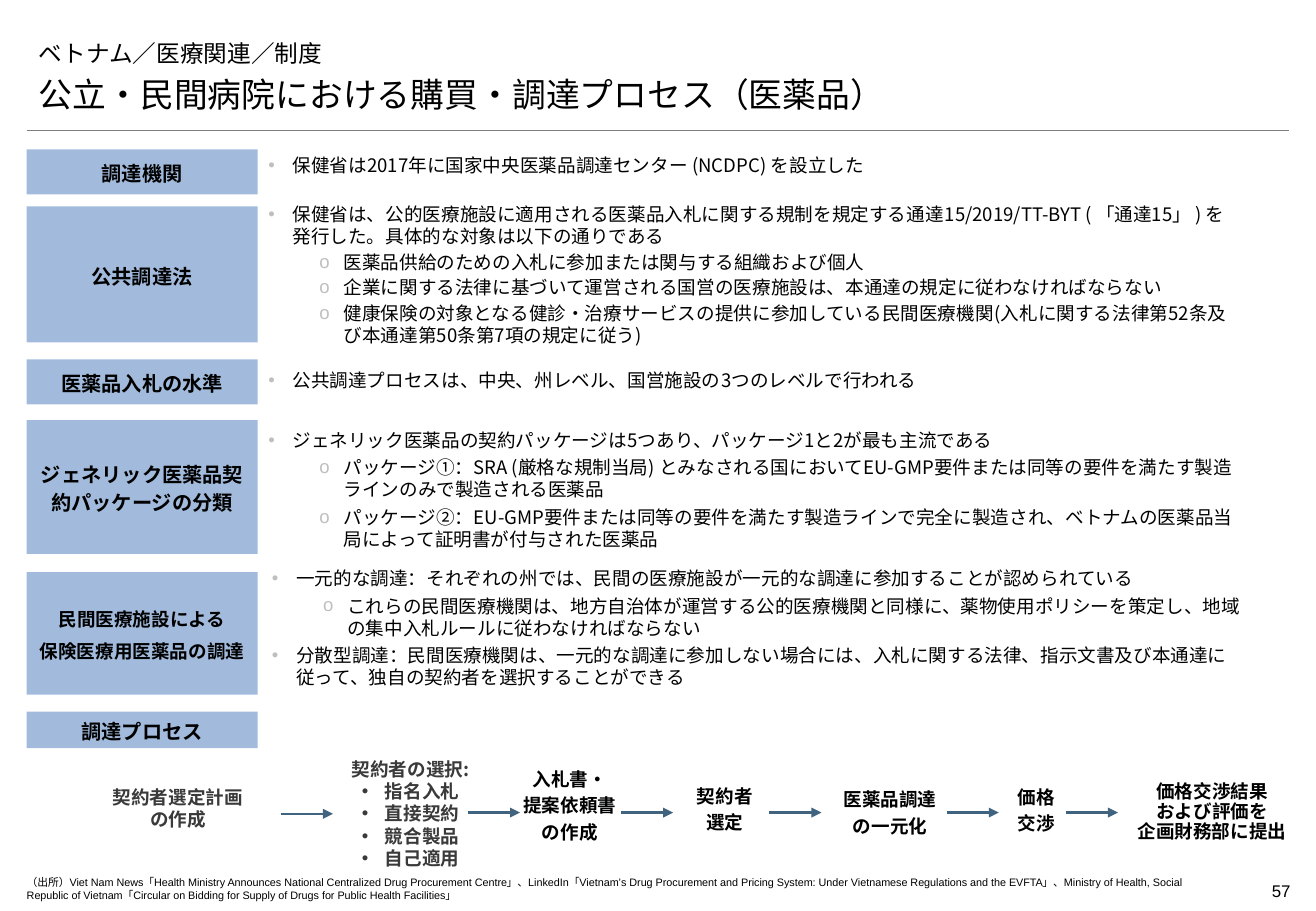
from dataclasses import dataclass

from lxml import etree
from pptx import Presentation
from pptx.dml.color import RGBColor
from pptx.enum import shapes, text
from pptx.oxml import ns
from pptx.util import Inches, Pt


@dataclass(frozen=True)
class Theme:
    black: str = "000000"
    grey_text: str = "3A3A3A"
    bullet: str = "BFBFBF"
    label: str = "A2BBDC"
    arrow: str = "40647F"
    rule: str = "7F7F7F"
    cjk: str = "Noto Sans CJK JP"
    arial: str = "Arial"
    headline_font: str = "Montserrat"
    kicker: float = 14
    headline: float = 20
    label_size: float = 12
    body: float = 11
    number: float = 10
    source: float = 6.4


theme = Theme()
LEFT, CENTER, RIGHT = text.PP_ALIGN.LEFT, text.PP_ALIGN.CENTER, text.PP_ALIGN.RIGHT


def set_bullet(para, char, left, hang, color=None):
    """Give a paragraph a bullet, or none when char is empty."""
    props = para._p.get_or_add_pPr()
    props.set("marL", str(Inches(left)))
    props.set("indent", str(-Inches(hang)))
    if not char:
        etree.SubElement(props, ns.qn("a:buNone"))
        return
    if color:
        holder = etree.SubElement(props, ns.qn("a:buClr"))
        etree.SubElement(holder, ns.qn("a:srgbClr"), val=color)
    etree.SubElement(props, ns.qn("a:buFont"), typeface=theme.arial)
    etree.SubElement(props, ns.qn("a:buChar"), char=char)


def write(frame, lines, size, font=theme.cjk, color=theme.black, bold=False,
          align=LEFT, spacing=1.0, before=0, after=0, bullets=None):
    """Write lines as paragraphs; bullets holds set_bullet arguments per line."""
    frame.word_wrap = True
    for index, line in enumerate(lines):
        para = frame.paragraphs[0] if index == 0 else frame.add_paragraph()
        para.text = line
        if bullets and bullets[index]:
            set_bullet(para, *bullets[index])
        para.alignment = align
        para.line_spacing = spacing
        para.space_before = Pt(before if index else 0)
        para.space_after = Pt(after)
        para.font.size, para.font.bold, para.font.name = Pt(size), bold, font
        para.font.color.rgb = RGBColor.from_string(color)
        run_props = para._p.pPr.find(ns.qn("a:defRPr"))
        etree.SubElement(run_props, ns.qn("a:ea"), typeface=font)


deck = Presentation()
deck.slide_width, deck.slide_height = Inches(10.83), Inches(7.5)
page = deck.slides.add_slide(deck.slide_layouts[1])

# Title and headline
headings = [
    (page.shapes.title, 0.31, 0.29, "ベトナム／医療関連／制度", theme.kicker, theme.cjk),
    (page.placeholders[1], 0.62, 0.37, "公立・民間病院における購買・調達プロセス（医薬品）",
     theme.headline, theme.headline_font),
]
for box, top, height, line, size, font in headings:
    box.left, box.top, box.width, box.height = map(Inches, (0.22, top, 10.39, height))
    box.text_frame.vertical_anchor = text.MSO_ANCHOR.BOTTOM
    box.text_frame.auto_size = text.MSO_AUTO_SIZE.NONE
    write(box.text_frame, [line], size, font, bullets=[("", 0, 0)])

# Section labels: top, height, size, lines
labels = [
    (1.23, 0.37, theme.label_size, ["調達機関"]),
    (1.7, 1.12, theme.label_size, ["公共調達法"]),
    (2.96, 0.37, theme.label_size, ["医薬品入札の水準"]),
    (3.46, 1.1, theme.label_size, ["ジェネリック医薬品契約パッケージの分類"]),
    (4.71, 1.01, theme.body, ["民間医療施設による", "保険医療用医薬品の調達"]),
    (5.86, 0.3, theme.label_size, ["調達プロセス"]),
]
for top, height, size, lines in labels:
    label = page.shapes.add_shape(shapes.MSO_SHAPE.RECTANGLE, Inches(0.22), Inches(top),
                                  Inches(1.9), Inches(height))
    label.shadow.inherit = False
    label.fill.solid()
    label.fill.fore_color.rgb = RGBColor.from_string(theme.label)
    label.line.fill.background()
    label.text_frame.vertical_anchor = text.MSO_ANCHOR.MIDDLE
    write(label.text_frame, lines, size, bold=True, align=CENTER, spacing=1.14, after=4)

# Section details: left, top, width, height, space before, (level, line)
details = [
    (2.11, 1.22, 8.92, 0.29, 0, [
        (0, "保健省は2017年に国家中央医薬品調達センター (NCDPC) を設立した")]),
    (2.11, 1.62, 8.2, 1.3, 2, [
        (0, "保健省は、公的医療施設に適用される医薬品入札に関する規制を規定する通達15/2019/TT-BYT ( 「通達15」 ) "
            "を発行した。具体的な対象は以下の通りである"),
        (1, "医薬品供給のための入札に参加または関与する組織および個人"),
        (1, "企業に関する法律に基づいて運営される国営の医療施設は、本通達の規定に従わなければならない"),
        (1, "健康保険の対象となる健診・治療サービスの提供に参加している民間医療機関"
            "(入札に関する法律第52条及び本通達第50条第7項の規定に従う)")]),
    (2.11, 2.99, 8.2, 0.29, 0, [
        (0, "公共調達プロセスは、中央、州レベル、国営施設の3つのレベルで行われる")]),
    (2.11, 3.48, 8.2, 1.14, 3, [
        (0, "ジェネリック医薬品の契約パッケージは5つあり、パッケージ1と2が最も主流である"),
        (1, "パッケージ①：SRA (厳格な規制当局) とみなされる国においてEU-GMP要件または"
            "同等の要件を満たす製造ラインのみで製造される医薬品"),
        (1, "パッケージ②：EU-GMP要件または同等の要件を満たす製造ラインで完全に製造され、"
            "ベトナムの医薬品当局によって証明書が付与された医薬品")]),
    (2.14, 4.62, 8.2, 1.14, 3, [
        (0, "一元的な調達：それぞれの州では、民間の医療施設が一元的な調達に参加することが認められている"),
        (1, "これらの民間医療機関は、地方自治体が運営する公的医療機関と同様に、"
            "薬物使用ポリシーを策定し、地域の集中入札ルールに従わなければならない"),
        (0, "分散型調達：民間医療機関は、一元的な調達に参加しない場合には、"
            "入札に関する法律、指示文書及び本通達に従って、独自の契約者を選択することができる")]),
]
level_bullets = [("•", 0.2, 0.2, theme.bullet), ("o", 0.62, 0.2, theme.bullet)]
for left, top, width, height, before, items in details:
    box = page.shapes.add_textbox(*map(Inches, (left, top, width, height)))
    box.text_frame.auto_size = text.MSO_AUTO_SIZE.SHAPE_TO_FIT_TEXT
    write(box.text_frame, [line for level, line in items], theme.body, before=before,
          bullets=[level_bullets[level] for level, line in items])
    for para, (level, line) in zip(box.text_frame.paragraphs, items):
        para.level = level

# Process steps: left, top, width, height, colour, line spacing, space after, lines
steps = [
    (0.71, 6.42, 1.51, 0.47, theme.grey_text, 1.0, 0, ["契約者選定計画", "の作成"]),
    (2.68, 6.19, 1.4, 1.03, theme.grey_text, 1.0, 0,
     ["契約者の選択:", "指名入札", "直接契約", "競合製品", "自己適用"]),
    (4.18, 6.29, 1.02, 0.73, theme.black, 0.9, 3.85, ["入札書・", "提案依頼書", "の作成"]),
    (5.4, 6.43, 1.13, 0.5, theme.black, 0.9, 3.85, ["契約者", "選定"]),
    (6.83, 6.46, 0.99, 0.5, theme.black, 0.9, 3.85, ["医薬品調達", "の一元化"]),
    (8.02, 6.44, 1.02, 0.5, theme.black, 0.9, 3.85, ["価格", "交渉"]),
    (9.2, 6.39, 1.55, 0.6, theme.black, 0.9, 0,
     ["価格交渉結果", "および評価を", "企画財務部に提出"]),
]
for left, top, width, height, color, spacing, after, lines in steps:
    step = page.shapes.add_textbox(*map(Inches, (left, top, width, height)))
    step.text_frame.auto_size = text.MSO_AUTO_SIZE.SHAPE_TO_FIT_TEXT
    choices = [None] + [("•", 0.19, 0.19)] * 4 if len(lines) == 5 else None
    write(step.text_frame, lines, theme.body, color=color, bold=True, align=CENTER,
          spacing=spacing, after=after, bullets=choices)

# Title rule and process arrows: start, end, y, colour, width
rules = [(0.22, 10.61, 1.07, theme.rule, 0.25)]
arrows = [(left, left + 0.43, 6.7 if left == 2.31 else 6.69, theme.arrow, 1.5)
          for left in (2.31, 3.85, 5.11, 6.33, 7.79, 8.77)]
for start, end, y, color, width in rules + arrows:
    line = page.shapes.add_connector(shapes.MSO_CONNECTOR.STRAIGHT, Inches(start), Inches(y),
                                     Inches(end), Inches(y))
    line.line.color.rgb = RGBColor.from_string(color)
    line.line.width = Pt(width)
    if color == theme.arrow:
        etree.SubElement(line.line._get_or_add_ln(), ns.qn("a:tailEnd"), type="triangle")
    etree.SubElement(line._element.spPr, ns.qn("a:effectLst"))
line.end_connect(step, 1)  # the last arrow meets the last step

# Source line and page number
source = page.shapes.add_textbox(Inches(0.22), Inches(7.21), Inches(9.61), Inches(0.29))
number = page.shapes.add_textbox(Inches(9.83), Inches(7.2), Inches(0.79), Inches(0.27))
for box in (source, number):
    box.text_frame.margin_left = box.text_frame.margin_right = 0
source.text_frame.margin_top = source.text_frame.margin_bottom = 0
write(source.text_frame, [
    "（出所）Viet Nam News「Health Ministry Announces National Centralized Drug Procurement Centre」、"
    "LinkedIn「Vietnam’s Drug Procurement and Pricing System: Under Vietnamese Regulations and the EVFTA」、"
    "Ministry of Health, Social Republic of Vietnam"
    "「Circular on Bidding for Supply of Drugs for Public Health Facilities」"],
    theme.source, theme.arial)
write(number.text_frame, ["57"], theme.number, theme.arial, align=RIGHT)

deck.save("out.pptx")
